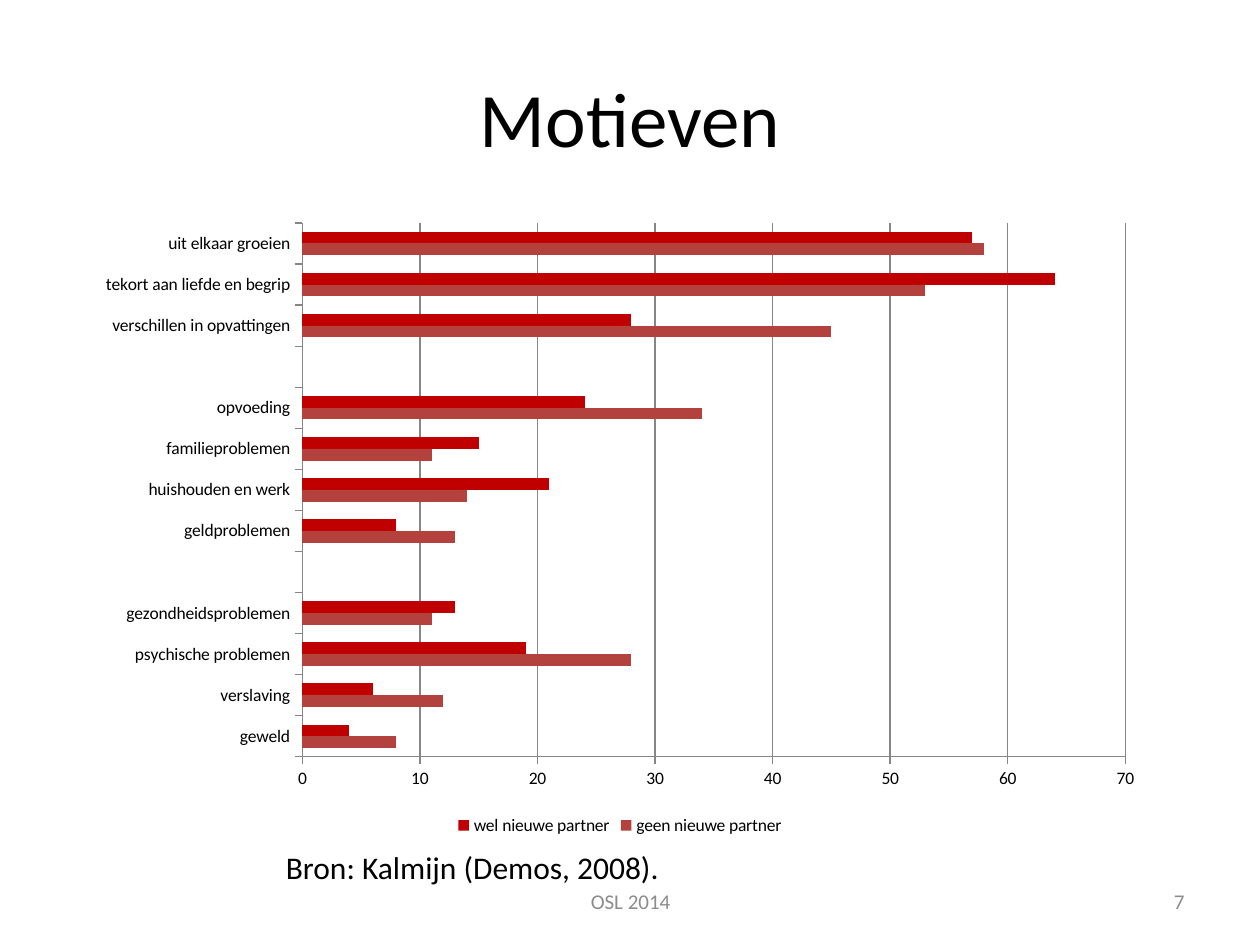
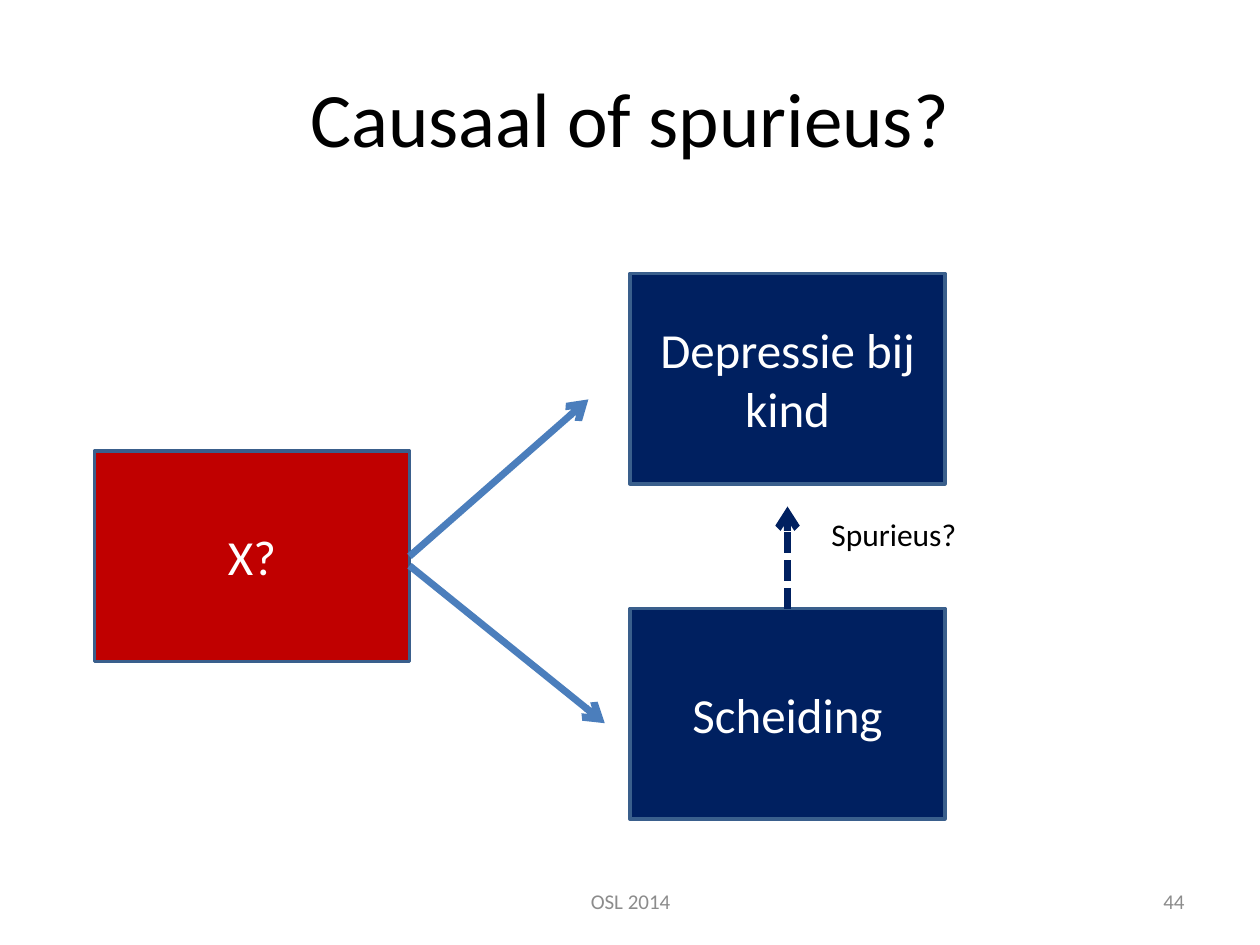
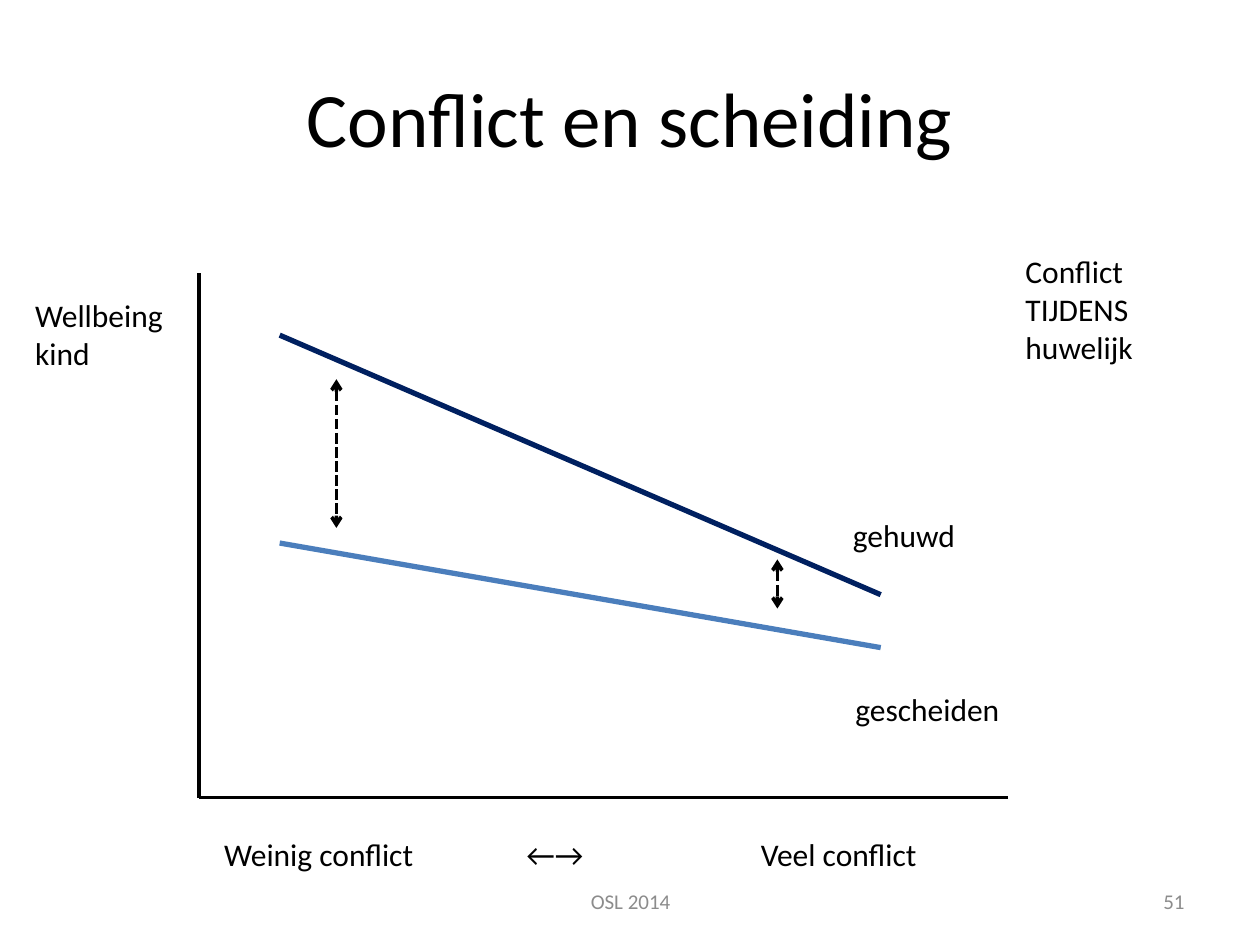
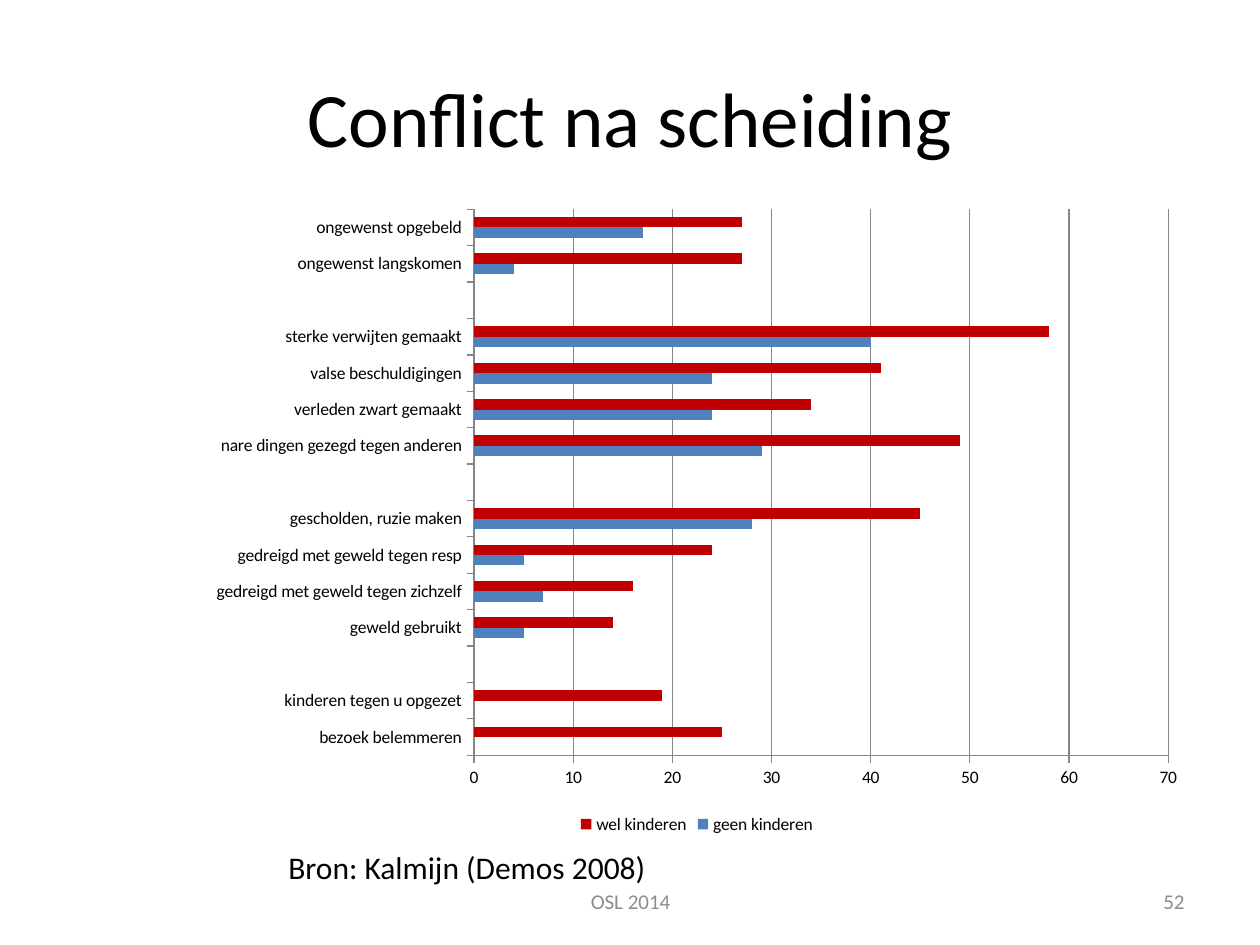
from dataclasses import dataclass
from typing import Any, Optional

from lxml import etree
from pptx import Presentation
from pptx import util as u
from pptx.chart import data as cd
from pptx.dml import color as col
from pptx.enum import chart as ce
from pptx.enum import dml, shapes, text
from pptx.oxml import ns

Area = tuple[float, float, float, float]
Point = tuple[float, float]
ALIGN, ANCHOR, FIT = text.PP_ALIGN, text.MSO_ANCHOR, text.MSO_AUTO_SIZE


@dataclass(frozen=True)
class Theme:
    font: str = "Calibri"
    black: str = "000000"
    white: str = "FFFFFF"
    gray: str = "8C8C8C"
    grid: str = "868686"
    navy: str = "002060"
    red: str = "C00000"
    brick: str = "B3423F"
    blue: str = "4F81BD"
    steel: str = "4B7EBC"
    edge: str = "3A5F8C"
    title: int = 44
    box: int = 28
    body: int = 18
    foot: int = 12
    chart: int = 10


T = Theme()


@dataclass(frozen=True)
class Label:
    words: str
    area: Area
    size: int = T.body
    tint: str = T.black
    align: Any = ALIGN.LEFT
    anchor: Any = ANCHOR.TOP
    fit: Any = FIT.SHAPE_TO_FIT_TEXT
    tabs: tuple[float, ...] = ()


@dataclass(frozen=True)
class Box:
    words: str
    left: float
    top: float
    fill: str = T.navy
    width: float = 2.5
    height: float = 1.67


@dataclass(frozen=True)
class Line:
    start: Point
    end: Point
    tint: str = T.black
    width: float = 2
    dashed: bool = False
    heads: tuple[str, ...] = ()


@dataclass(frozen=True)
class Bars:
    area: Area
    names: tuple[str, str]
    tints: tuple[str, str]
    rows: list[tuple[str, Optional[int], Optional[int]]]


def assign(target: Any, values: dict[str, Any]) -> None:
    for name, value in values.items():
        setattr(target, name, value)


def rgb(tint: str) -> col.RGBColor:
    return col.RGBColor.from_string(tint)


def place(area: Area) -> list[u.Length]:
    return [u.Inches(n) for n in area]


def style(font: Any, size: int, tint: str) -> None:
    assign(font, {"name": T.font, "size": u.Pt(size)})
    font.color.rgb = rgb(tint)


def stroke(line: Any, tint: str, width: float) -> None:
    line.color.rgb = rgb(tint)
    line.width = u.Pt(width)


def write(shape: Any, words: str, size: int, tint: str, align: Any,
          anchor: Any, fit: Any = FIT.NONE) -> None:
    frame = shape.text_frame
    assign(frame, {"text": words, "word_wrap": True,
                   "vertical_anchor": anchor, "auto_size": fit})
    para = frame.paragraphs[0]
    para.alignment = align
    style(para.runs[0].font, size, tint)


def add_label(slide: Any, label: Label) -> None:
    shape = slide.shapes.add_textbox(*place(label.area))
    write(shape, label.words, label.size, label.tint, label.align,
          label.anchor, label.fit)
    if label.tabs:
        props = shape.text_frame.paragraphs[0]._p.get_or_add_pPr()
        stops = etree.SubElement(props, ns.qn("a:tabLst"))
        for stop in label.tabs:
            etree.SubElement(stops, ns.qn("a:tab"), pos=str(u.Inches(stop)), algn="l")


def add_box(slide: Any, box: Box) -> Any:
    area = (box.left, box.top, box.width, box.height)
    shape = slide.shapes.add_shape(shapes.MSO_SHAPE.RECTANGLE, *place(area))
    shape.shadow.inherit = False
    shape.fill.solid()
    shape.fill.fore_color.rgb = rgb(box.fill)
    stroke(shape.line, T.edge, 2)
    write(shape, box.words, T.box, T.white, ALIGN.CENTER, ANCHOR.MIDDLE)
    return shape


def add_line(slide: Any, line: Line) -> Any:
    link = slide.shapes.add_connector(shapes.MSO_CONNECTOR.STRAIGHT,
                                      *place(line.start + line.end))
    stroke(link.line, line.tint, line.width)
    if line.dashed:
        link.line.dash_style = dml.MSO_LINE.SQUARE_DOT
    for head in line.heads:
        etree.SubElement(link.line._get_or_add_ln(), ns.qn(f"a:{head}"), type="arrow")
    etree.SubElement(link._element.spPr, ns.qn("a:effectLst"))
    return link


def add_bars(slide: Any, bars: Bars) -> None:
    """Draw a bar chart whose rows run from the bottom up."""
    cats, *columns = zip(*bars.rows)
    data = cd.CategoryChartData()
    data.categories = cats
    for name, values in zip(bars.names, columns):
        data.add_series(name, values)
    chart = slide.shapes.add_chart(ce.XL_CHART_TYPE.BAR_CLUSTERED,
                                   *place(bars.area), data).chart
    style(chart.font, T.chart, T.black)
    assign(chart, {"has_title": False, "has_legend": True})
    assign(chart.legend, {"position": ce.XL_LEGEND_POSITION.BOTTOM,
                          "include_in_layout": False})
    plot = chart.plots[0]
    assign(plot, {"gap_width": 150, "overlap": 0, "vary_by_categories": False})
    for series, tint in zip(plot.series, bars.tints):
        series.format.fill.solid()
        series.format.fill.fore_color.rgb = rgb(tint)
    scale = chart.value_axis
    assign(scale, {"minimum_scale": 0, "maximum_scale": 70, "major_unit": 10,
                   "has_major_gridlines": True})
    stroke(scale.major_gridlines.format.line, T.grid, 0.75)
    for axis in (chart.category_axis, scale):
        assign(axis, {"major_tick_mark": ce.XL_TICK_MARK.OUTSIDE,
                      "minor_tick_mark": ce.XL_TICK_MARK.NONE})
        stroke(axis.format.line, T.grid, 0.75)


def add_slide(deck: Any, title: str, number: int) -> Any:
    slide = deck.slides.add_slide(deck.slide_layouts[5])
    head = slide.shapes.title
    sides = ("left", "top", "width", "height")
    assign(head, dict(zip(sides, place((0.5, 0.3, 9, 1.25)))))
    write(head, title, T.title, T.black, ALIGN.CENTER, ANCHOR.MIDDLE)
    for words, left, width, align in (("OSL 2014", 3.42, 3.17, ALIGN.CENTER),
                                      (str(number), 7.17, 2.33, ALIGN.RIGHT)):
        add_label(slide, Label(words, (left, 6.95, width, 0.4), T.foot, T.gray,
                               align, ANCHOR.MIDDLE, FIT.NONE))
    return slide


def add_motives(deck: Any) -> None:
    slide = add_slide(deck, "Motieven", 7)
    add_bars(slide, Bars(
        (0.67, 1.67, 8.5, 5), ("geen nieuwe partner", "wel nieuwe partner"),
        (T.brick, T.red), [
            ("geweld", 8, 4),
            ("verslaving", 12, 6),
            ("psychische problemen", 28, 19),
            ("gezondheidsproblemen", 11, 13),
            ("", None, None),
            ("geldproblemen", 13, 8),
            ("huishouden en werk", 14, 21),
            ("familieproblemen", 11, 15),
            ("opvoeding", 34, 24),
            ("", None, None),
            ("verschillen in opvattingen", 45, 28),
            ("tekort aan liefde en begrip", 53, 64),
            ("uit elkaar groeien", 58, 57),
        ]))
    add_label(slide, Label("Bron: Kalmijn (Demos, 2008).", (2.17, 6.68, 4.25, 0.4)))


def add_cause(deck: Any) -> None:
    slide = add_slide(deck, "Causaal of spurieus?", 44)
    add_box(slide, Box("Depressie bij kind", 5, 2.17))
    split = add_box(slide, Box("Scheiding", 5, 4.83))
    cause = add_box(slide, Box("X?", 0.75, 3.58, T.red))
    tail = ("tailEnd",)
    upper = add_line(slide, Line((3.25, 4.42), (4.67, 3.17), T.steel, 4, heads=tail))
    upper.begin_connect(cause, 3)
    add_line(slide, Line((3.25, 4.49), (4.8, 5.74), T.steel, 4, heads=tail))
    doubt = add_line(slide, Line((6.25, 4.83), (6.25, 4.02), T.navy, 4, True, tail))
    doubt.begin_connect(split, 0)
    add_label(slide, Label("Spurieus?", (6.5, 4.04, 1.58, 0.4)))


def add_trend(deck: Any) -> None:
    slide = add_slide(deck, "Conflict en scheiding", 51)
    both = ("headEnd", "tailEnd")
    for line in (
        Line((1.58, 2.17), (1.58, 6.33)),
        Line((8, 6.33), (1.58, 6.33)),
        Line((2.22, 4.31), (6.99, 5.14), T.steel, 3),
        Line((2.22, 2.66), (6.99, 4.72), T.navy, 3),
        Line((2.67, 3.01), (2.67, 4.19), dashed=True, heads=both),
        Line((6.17, 4.44), (6.17, 4.83), dashed=True, heads=both),
    ):
        add_line(slide, line)
    for label in (
        Label("Weinig conflict\t←→\tVeel conflict", (1.68, 6.58, 6.33, 0.4),
              tabs=(2.4, 4.26)),
        Label("Wellbeing kind", (0.18, 2.3, 1.5, 0.71)),
        Label("gescheiden", (6.69, 5.43, 2.19, 0.4)),
        Label("gehuwd", (6.67, 4.05, 2.19, 0.4)),
        Label("Conflict TIJDENS huwelijk", (8.04, 1.95, 1.32, 1.01)),
    ):
        add_label(slide, label)


def add_after(deck: Any) -> None:
    slide = add_slide(deck, "Conflict na scheiding", 52)
    add_bars(slide, Bars(
        (1.56, 1.56, 7.94, 5.1), ("geen kinderen", "wel kinderen"),
        (T.blue, T.red), [
            ("bezoek belemmeren", None, 25),
            ("kinderen tegen u opgezet", None, 19),
            ("", None, None),
            ("geweld gebruikt", 5, 14),
            ("gedreigd met geweld tegen zichzelf", 7, 16),
            ("gedreigd met geweld tegen resp", 5, 24),
            ("gescholden, ruzie maken", 28, 45),
            ("", None, None),
            ("nare dingen gezegd tegen anderen", 29, 49),
            ("verleden zwart gemaakt", 24, 34),
            ("valse beschuldigingen", 24, 41),
            ("sterke verwijten gemaakt", 40, 58),
            ("", None, None),
            ("ongewenst langskomen", 4, 27),
            ("ongewenst opgebeld", 17, 27),
        ]))
    add_label(slide, Label("Bron: Kalmijn (Demos 2008)", (2.19, 6.68, 4.25, 0.4)))


def main() -> None:
    deck = Presentation()
    assign(deck, {"slide_width": u.Inches(10), "slide_height": u.Inches(7.5)})
    for build in (add_motives, add_cause, add_trend, add_after):
        build(deck)
    deck.save("out.pptx")


if __name__ == "__main__":
    main()
